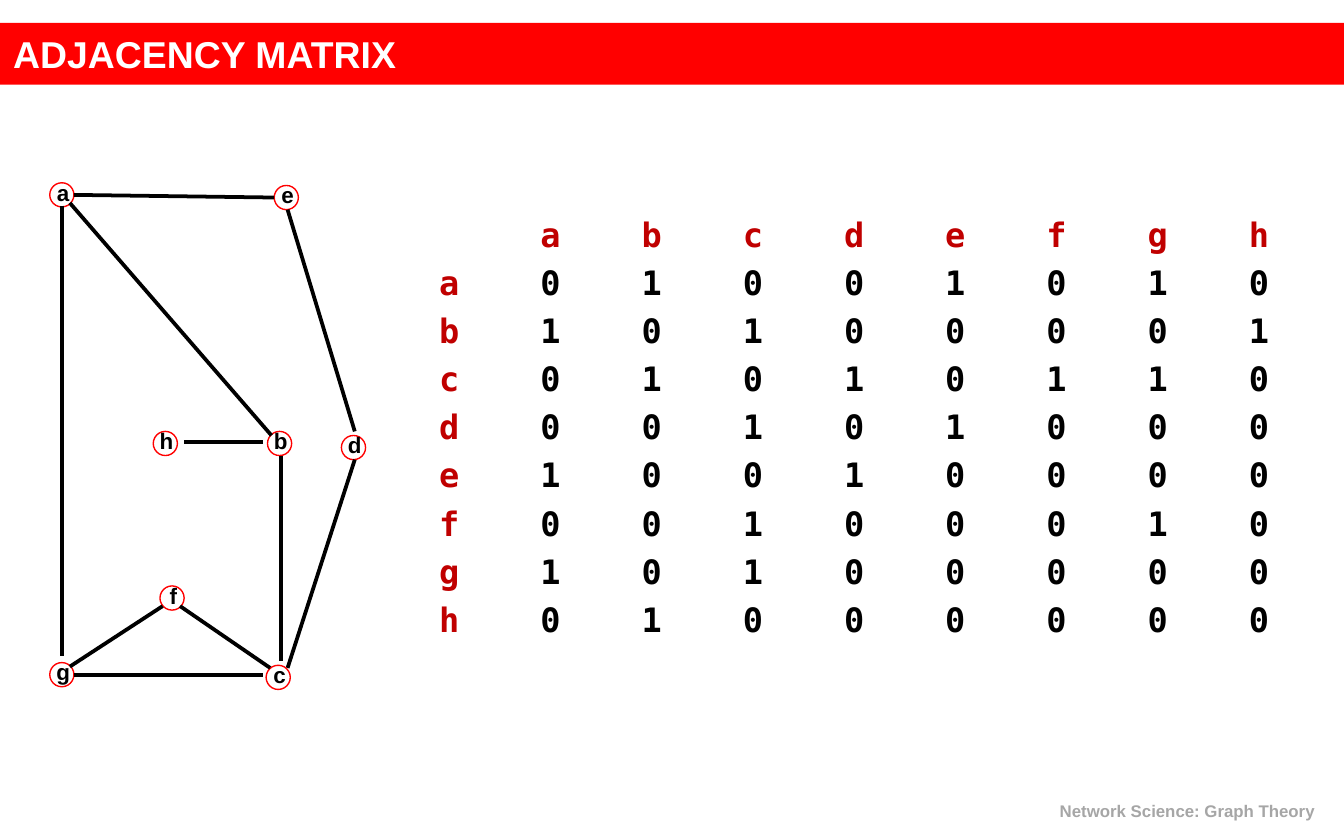
"""Build the adjacency matrix slide: a graph on the left, its matrix on the right."""
from lxml import etree
from pptx import Presentation
from pptx import util as u
from pptx.dml.color import RGBColor
from pptx.enum import shapes, text
from pptx.oxml.ns import qn

RED = RGBColor(0xFF, 0x00, 0x00)
DARK_RED = RGBColor(0xC0, 0x00, 0x00)
BLACK = RGBColor(0x00, 0x00, 0x00)
WHITE = RGBColor(0xFF, 0xFF, 0xFF)
GREY = RGBColor(0xA6, 0xA6, 0xA6)

NODE_SIZE = 0.18
LABEL_SIZE = (0.26, 0.2)
LABEL_SHIFT = 0.03
COLUMN_STEP = 0.753

NODES = {
    "a": (0.37, 1.36), "b": (1.99, 3.21), "c": (1.98, 4.95), "d": (2.54, 3.24),
    "e": (2.04, 1.38), "f": (1.19, 4.36), "g": (0.37, 4.93), "h": (1.14, 3.21),
}
EDGES = {
    "ab": (0.52, 1.51, 2.02, 3.24), "ag": (0.46, 1.53, 0.46, 4.88),
    "ae": (0.55, 1.45, 2.04, 1.47), "gf": (0.52, 4.96, 1.21, 4.51),
    "fc": (1.34, 4.51, 2.01, 4.97), "gc": (0.55, 5.02, 1.96, 5.02),
    "bc": (2.09, 3.39, 2.09, 4.92), "hb": (1.37, 3.29, 1.96, 3.29),
    "ed": (2.14, 1.56, 2.64, 3.21), "cd": (2.14, 4.97, 2.64, 3.42),
}
MATRIX = {
    "a": "01001010", "b": "10100001", "c": "01010110", "d": "00101000",
    "e": "10010000", "f": "00100010", "g": "10100000", "h": "01000000",
}


def inches(*values):
    return [u.Inches(v) for v in values]


def add_run(p, content, size, color, font="Arial"):
    r = p.add_run()
    r.text = content
    for name, value in {"size": u.Pt(size), "bold": True, "name": font}.items():
        setattr(r.font, name, value)
    r.font.color.rgb = color


def add_text(s, box, **frame):
    tf = s.shapes.add_textbox(*inches(*box)).text_frame
    for name, value in {"word_wrap": True, **frame}.items():
        setattr(tf, name, value)
    return tf


def add_title(s, content):
    sp = s.shapes.add_shape(shapes.MSO_SHAPE.RECTANGLE, *inches(0, 0.17, 10, 0.46))
    sp.shadow.inherit = False
    sp.fill.solid()
    sp.fill.fore_color.rgb = RED
    sp.line.fill.background()
    sp.text_frame.vertical_anchor = text.MSO_ANCHOR.MIDDLE
    p = sp.text_frame.paragraphs[0]
    p.alignment = text.PP_ALIGN.LEFT
    add_run(p, content, 20, WHITE)


def add_footer(s, content):
    p = add_text(s, (7.08, 5.91, 2.8, 0.25)).paragraphs[0]
    p.alignment = text.PP_ALIGN.RIGHT
    add_run(p, content, 9, GREY)


def add_node(s, name, left, top):
    sp = s.shapes.add_shape(shapes.MSO_SHAPE.OVAL, *inches(left, top, NODE_SIZE, NODE_SIZE))
    sp.shadow.inherit = False
    sp.fill.background()
    sp.line.color.rgb = RED
    sp.line.width = u.Pt(0.75)
    margins = dict.fromkeys(("margin_left", "margin_top", "margin_right", "margin_bottom"), 0)
    tf = add_text(s, (left - LABEL_SHIFT, top - LABEL_SHIFT, *LABEL_SIZE), **margins)
    p = tf.paragraphs[0]
    p.alignment = text.PP_ALIGN.CENTER
    add_run(p, name, 12, BLACK)


def add_edge(s, ends):
    line = s.shapes.add_connector(shapes.MSO_CONNECTOR.STRAIGHT, *inches(*ends))
    line.line.color.rgb = BLACK
    line.line.width = u.Pt(2)
    etree.SubElement(line._element.spPr, qn("a:effectLst"))


def set_tabs(p, count):
    tabs = etree.SubElement(p._p.get_or_add_pPr(), qn("a:tabLst"))
    for i in range(1, count + 1):
        etree.SubElement(tabs, qn("a:tab"), pos=str(u.Inches(i * COLUMN_STEP)), algn="l")


def add_matrix(s):
    tf = add_text(s, (3.17, 1.54, 7, 3.47))
    for i, (name, cells) in enumerate([("", "".join(MATRIX)), *MATRIX.items()]):
        p = tf.add_paragraph() if i else tf.paragraphs[0]
        p.space_before = u.Pt(4.2)
        set_tabs(p, len(cells))
        if name:
            add_run(p, name, 18, DARK_RED, "DejaVu Sans Mono")
        color = BLACK if name else DARK_RED
        add_run(p, "".join("\t" + c for c in cells), 18, color, "DejaVu Sans Mono")


def main():
    prs = Presentation()
    prs.slide_width, prs.slide_height = inches(10, 6.25)
    s = prs.slides.add_slide(prs.slide_layouts[6])
    add_matrix(s)
    add_title(s, "ADJACENCY MATRIX")
    add_footer(s, "Network Science: Graph Theory")
    for name, (left, top) in NODES.items():
        add_node(s, name, left, top)
    for ends in EDGES.values():
        add_edge(s, ends)
    prs.save("out.pptx")


if __name__ == "__main__":
    main()
